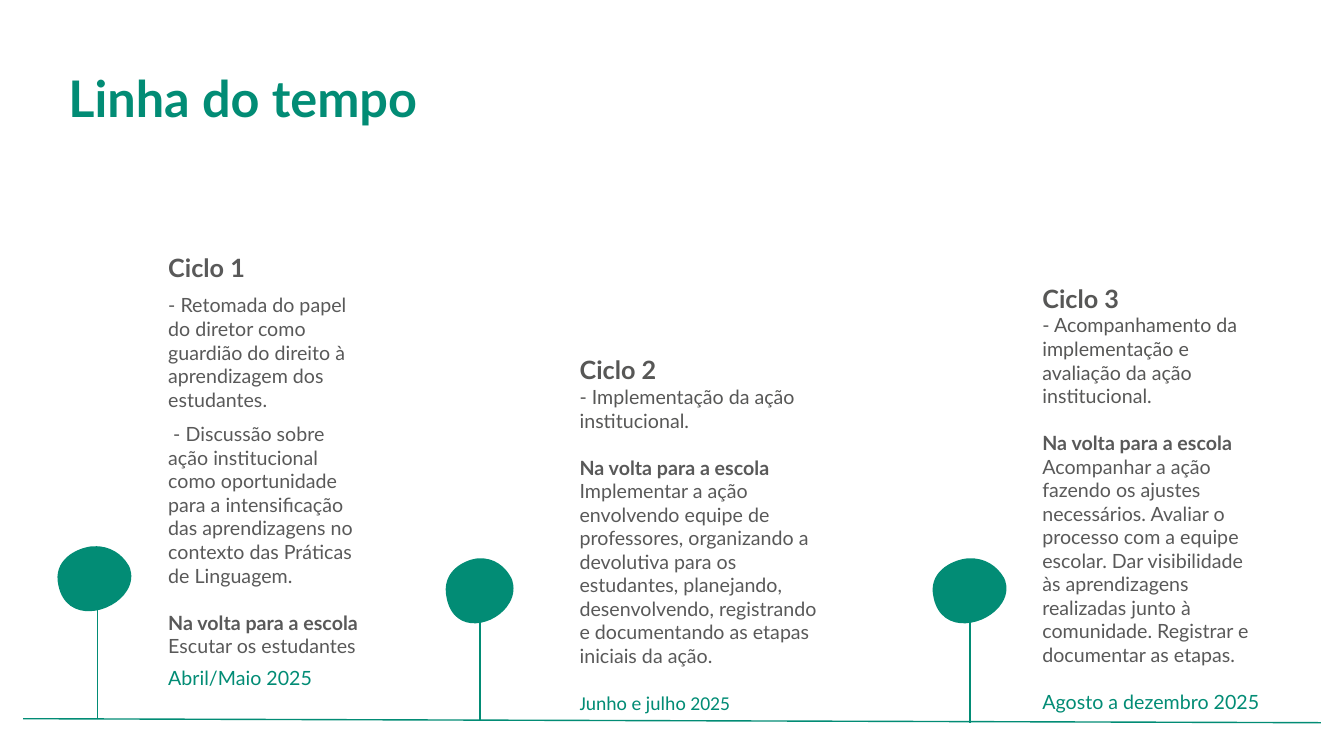
"""Build the "Linha do tempo" slide: three school cycles along a timeline."""
from lxml import etree
from pptx import Presentation, util as u
from pptx.dml.color import RGBColor
from pptx.enum import shapes, text
from pptx.oxml.ns import qn

THEME = {
    "green": RGBColor.from_string("028C75"),
    "grey": RGBColor.from_string("595959"),
    "warm_grey": RGBColor.from_string("575756"),
    "title": u.Pt(36),
    "heading": u.Pt(18),
    "body": u.Pt(14),
    "line": u.Pt(1),
    "font": "Lato",
    "date_font": "Calibri",
}
CELL = u.Inches(1)
COLUMNS, ROWS = 13.33, 7.5
BLANK_LINE = 16.8

BLOB_UNIT = CELL / 100
BLOB_WIDTH, BLOB_HEIGHT = 74, 64
BLOB_START = (72, 22)
BLOB_CURVES = [
    ((71, 20), (71, 19), (70, 18)),
    ((64, 8), (52, -1), (36, 0)),
    ((35, 0), (34, 0), (34, 0)),
    ((18, 2), (-5, 14), (1, 39)),
    ((9, 77), (55, 67), (69, 44)),
    ((74, 36), (74, 28), BLOB_START),
]

SCHOOL = "Na volta para a escola"
CYCLES = [
    {
        "stem": (0.97, 5.64, 7.13), "blob": (0.57, 5.42, 0.74),
        "box": (1.57, 2.45, 2.11, 4.72), "heading": "Ciclo 1", "color": "grey",
        "goals": [
            "- Retomada do papel do diretor como guardião do direito à aprendizagem dos estudantes.",
            " - Discussão sobre ação institucional como oportunidade para a intensificação das "
            "aprendizagens no contexto das Práticas de Linguagem.",
        ],
        "goal_gap": 8, "task": "Escutar os estudantes",
        "date": "Abril/Maio 2025", "date_gap": 6, "date_font": THEME["font"],
    },
    {
        "stem": (4.76, 5.98, 7.15), "blob": (4.42, 5.54, 0.68),
        "box": (5.65, 3.47, 2.62, 3.7), "heading": "Ciclo 2", "color": "warm_grey",
        "goals": ["- Implementação da ação institucional."],
        "goal_gap": 0,
        "task": "Implementar a ação envolvendo equipe de professores, organizando a devolutiva "
                "para os estudantes, planejando, desenvolvendo, registrando e documentando as "
                "etapas iniciais da ação.",
        "date": "Junho e julho 2025", "date_gap": BLANK_LINE, "date_font": THEME["date_font"],
    },
    {
        "stem": (9.62, 6, 7.17), "blob": (9.25, 5.54, 0.74),
        "box": (10.24, 2.76, 2.37, 4.41), "heading": "Ciclo 3", "color": "warm_grey",
        "goals": ["- Acompanhamento da implementação e avaliação da ação institucional."],
        "goal_gap": 0,
        "task": "Acompanhar a ação fazendo os ajustes necessários. Avaliar o processo com a "
                "equipe escolar. Dar visibilidade às aprendizagens realizadas junto à "
                "comunidade. Registrar e documentar as etapas.",
        "date": "Agosto a dezembro 2025", "date_gap": BLANK_LINE, "date_font": THEME["font"],
    },
]

deck = Presentation()
deck.slide_width, deck.slide_height = int(COLUMNS * CELL), int(ROWS * CELL)
page = deck.slides.add_slide(deck.slide_layouts[6])


def add_line(*ends):
    line = page.shapes.add_connector(
        shapes.MSO_CONNECTOR.STRAIGHT, *(int(end * CELL) for end in ends))
    line.line.color.rgb = THEME["green"]
    line.line.width = THEME["line"]
    etree.SubElement(line._element.spPr, qn("a:effectLst"))


def add_text(place, lines):
    box = page.shapes.add_textbox(*(int(length * CELL) for length in place))
    frame = box.text_frame
    frame.word_wrap = True
    for index, (words, size, bold, color, font, gap) in enumerate(lines):
        para = frame.paragraphs[0] if index == 0 else frame.add_paragraph()
        if gap:
            para.space_before = u.Pt(gap)
        span = para.add_run()
        span.text = words
        span.font.size, span.font.bold, span.font.name = THEME[size], bold, font
        span.font.color.rgb = THEME[color]
    return frame


add_line(0.23, 7.13, 13.1, 7.17)

for cycle in CYCLES:
    stem_x, stem_top, stem_bottom = cycle["stem"]
    add_line(stem_x, stem_top, stem_x, stem_bottom)

    left, top, width = cycle["blob"]
    builder = page.shapes.build_freeform(0, 0, scale=BLOB_UNIT)
    builder.add_line_segments([(BLOB_WIDTH, BLOB_HEIGHT)], close=True)
    blob = builder.convert_to_shape(int(left * 100), int(top * 100))
    blob.left, blob.top, blob.width = (int(length * CELL) for length in (left, top, width))
    outline = next(blob._element.iter(qn("a:path")))
    for part in list(outline):
        outline.remove(part)
    steps = [("a:moveTo", [BLOB_START])] + [("a:cubicBezTo", curve) for curve in BLOB_CURVES]
    for tag, points in steps + [("a:close", [])]:
        part = etree.SubElement(outline, qn(tag))
        for x, y in points:
            etree.SubElement(part, qn("a:pt"), x=str(x), y=str(y))
    blob.shadow.inherit = False
    blob.fill.solid()
    blob.fill.fore_color.rgb = THEME["green"]
    blob.line.fill.background()

    font, color = THEME["font"], cycle["color"]
    lines = [(cycle["heading"], "heading", True, color, font, 0)]
    lines += [(goal, "body", False, color, font, cycle["goal_gap"]) for goal in cycle["goals"]]
    lines += [
        (SCHOOL, "body", True, "grey", font, BLANK_LINE),
        (cycle["task"], "body", False, "grey", font, 0),
        (cycle["date"], "body", False, "green", cycle["date_font"], cycle["date_gap"]),
    ]
    add_text(cycle["box"], lines).auto_size = text.MSO_AUTO_SIZE.SHAPE_TO_FIT_TEXT

title = add_text((0.58, 0.28, 11.07, 1.45),
                 [("Linha do tempo", "title", True, "green", THEME["font"], 0)])
title.vertical_anchor = text.MSO_ANCHOR.MIDDLE
title.paragraphs[0].line_spacing = 0.9

deck.save("out.pptx")
